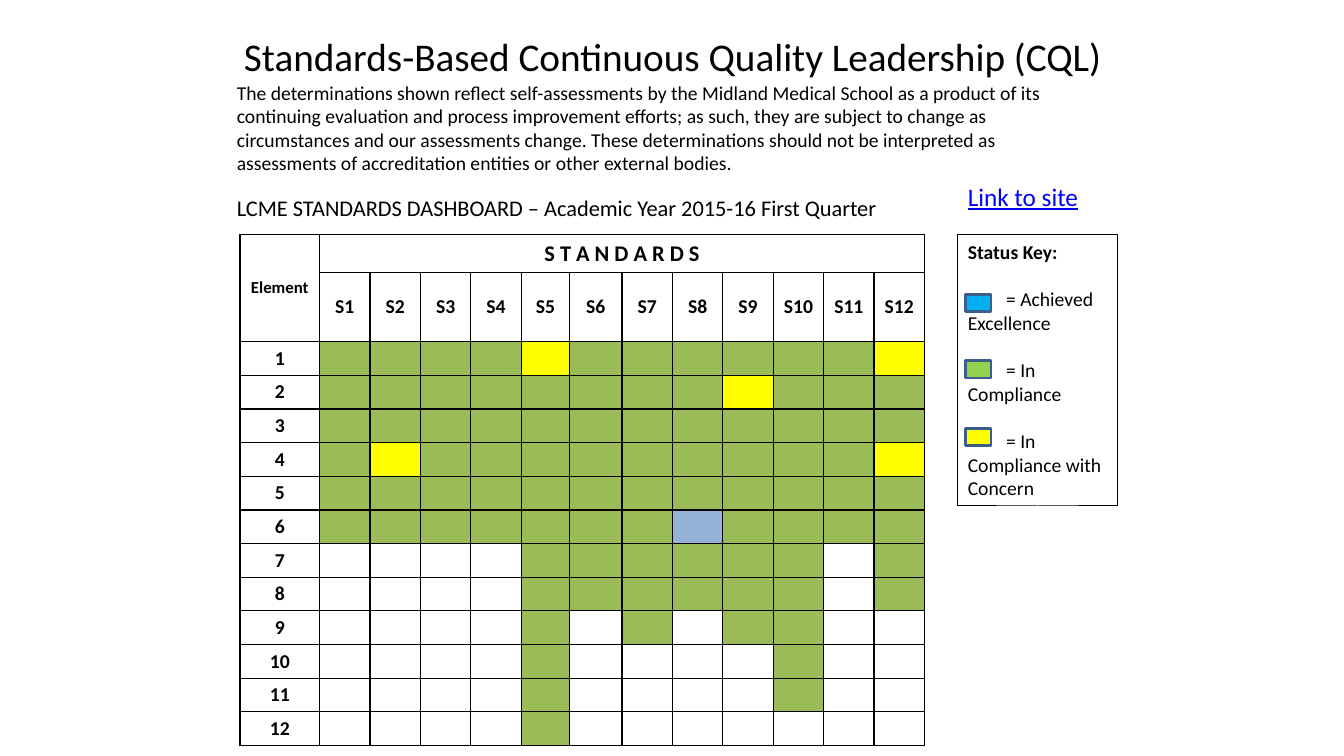
from lxml import etree
from pptx import Presentation
from pptx.dml.color import RGBColor
from pptx.enum.shapes import MSO_SHAPE
from pptx.enum.text import MSO_ANCHOR, PP_ALIGN
from pptx.oxml.ns import qn
from pptx.util import Inches, Pt

RECT = MSO_SHAPE.RECTANGLE
TOP, MIDDLE = MSO_ANCHOR.TOP, MSO_ANCHOR.MIDDLE
LEFT, CENTER = PP_ALIGN.LEFT, PP_ALIGN.CENTER

TITLE = "Standards-Based Continuous Quality Leadership (CQL)"
DISCLAIMER = (
    "The determinations shown reflect self-assessments by the Midland Medical School "
    "as a product of its continuing evaluation and process improvement efforts; as such, "
    "they are subject to change as circumstances and our assessments change. These "
    "determinations should not be interpreted as assessments of accreditation entities "
    "or other external bodies."
)
DASHBOARD = "LCME STANDARDS DASHBOARD – Academic Year 2015-16 First Quarter"
LINK = "Link to site"
KEY_TITLE = "Status Key:"
# (meaning, swatch colour, swatch top)
KEY = [
    ("= Achieved Excellence", "excellence_key", 2.92),
    ("= In Compliance", "compliance_key", 3.58),
    ("= In Compliance with Concern", "concern", 4.25),
]
# One row per element, one letter per standard S1 to S12:
# G in compliance, Y with concern, B excellence, - not applicable
STATUS = [
    "GGGGYGGGGGGY",
    "GGGGGGGGYGGG",
    "GGGGGGGGGGGG",
    "GYGGGGGGGGGY",
    "GGGGGGGGGGGG",
    "GGGGGGGBGGGG",
    "----GGGGGG-G",
    "----GGGGGG-G",
    "----G-G-GG--",
    "----G----G--",
    "----G----G--",
    "----G-------",
]
FILL = {"G": "compliance", "Y": "concern", "B": "excellence", "-": "paper"}
COLUMNS = [0.79] + [0.5] * 4 + [0.48, 0.52] + [0.5] * 6
ROWS = [0.37, 0.69] + [0.334] * len(STATUS)

THEME = {
    "font": "Calibri",
    "ink": "000000", "paper": "FFFFFF", "link": "0000FF", "swatch_line": "3A5F8C",
    "compliance": "9BBB59", "concern": "FFFF00", "excellence": "95B3D7",
    "compliance_key": "92D050", "excellence_key": "00B0F0",
    "title": 28, "link_size": 18, "heading": 16, "body": 14, "small": 12,
}


def color(name):
    return RGBColor.from_string(THEME[name])


def write(p, text, size="body", ink="ink", bold=False, align=LEFT):
    p.alignment = align
    r = p.add_run()
    r.text = text
    r.font.name = THEME["font"]
    r.font.size = Pt(THEME[size])
    r.font.bold = bold
    r.font.color.rgb = color(ink)
    return r


def add_text(s, box, text, size="body", ink="ink", wrap=True):
    tf = s.shapes.add_textbox(*map(Inches, box)).text_frame
    tf.word_wrap = wrap
    return write(tf.paragraphs[0], text, size, ink)


def add_rect(s, box, line, width, fill=None):
    sp = s.shapes.add_shape(RECT, *map(Inches, box))
    sp.shadow.inherit = False
    sp.line.color.rgb = color(line)
    sp.line.width = Pt(width)
    if fill:
        sp.fill.solid()
        sp.fill.fore_color.rgb = color(fill)
    else:
        sp.fill.background()
    return sp


def style_cell(cell, fill):
    """Give a cell black borders, a fill, tight margins and a body-size empty line."""
    tc_pr = cell._tc.get_or_add_tcPr()
    for side in ("lnL", "lnR", "lnT", "lnB"):
        ln = etree.SubElement(tc_pr, qn(f"a:{side}"), w=str(Pt(1)))
        solid = etree.SubElement(ln, qn("a:solidFill"))
        etree.SubElement(solid, qn("a:srgbClr"), val=THEME["ink"])
    cell.fill.solid()
    cell.fill.fore_color.rgb = color(fill)
    cell.margin_left = cell.margin_right = Inches(0.05)
    cell.margin_top = cell.margin_bottom = Inches(0.04)
    cell.vertical_anchor = MIDDLE
    p = cell.text_frame.paragraphs[0]
    etree.SubElement(p._p, qn("a:endParaRPr"), sz=str(THEME["body"] * 100))


def add_dashboard(s, left, top):
    frame = s.shapes.add_table(len(ROWS), len(COLUMNS), Inches(left), Inches(top),
                               Inches(sum(COLUMNS)), Inches(sum(ROWS)))
    table = frame.table
    for column, width in zip(table.columns, COLUMNS):
        column.width = Inches(width)
    for row, height in zip(table.rows, ROWS):
        row.height = Inches(height)

    def label(row, col, text, size="body"):
        p = table.cell(row, col).text_frame.paragraphs[0]
        write(p, text, size, bold=True, align=CENTER)

    fills = ["-" * len(COLUMNS)] * 2 + ["-" + line for line in STATUS]
    for i, line in enumerate(fills):
        for j, status in enumerate(line):
            style_cell(table.cell(i, j), FILL[status])
    table.cell(0, 0).merge(table.cell(1, 0))
    table.cell(0, 1).merge(table.cell(0, len(COLUMNS) - 1))
    label(0, 0, "Element", "small")
    label(0, 1, "S T A N D A R D S", "heading")
    for j in range(1, len(COLUMNS)):
        label(1, j, f"S{j}")
    for i in range(1, len(STATUS) + 1):
        label(i + 1, 0, str(i))


def add_status_key(s):
    tf = add_rect(s, (9.5, 2.33, 1.58, 2.69), "ink", 0.75).text_frame
    tf.word_wrap = True
    tf.vertical_anchor = TOP
    write(tf.paragraphs[0], KEY_TITLE, bold=True)
    for meaning, fill, top in KEY:
        p = tf.add_paragraph()
        p.space_before = Pt(17)
        p._p.get_or_add_pPr().set("indent", str(Inches(0.38)))
        write(p, meaning)
        add_rect(s, (9.58, top, 0.25, 0.17), "swatch_line", 2, fill)


def main():
    prs = Presentation()
    prs.slide_width, prs.slide_height = Inches(13.33), Inches(7.5)
    s = prs.slides.add_slide(prs.slide_layouts[5])

    title = s.shapes.title
    title.left, title.top, title.width, title.height = map(Inches, (1.67, 0.25, 10, 0.61))
    title.text_frame.vertical_anchor = MIDDLE
    write(title.text_frame.paragraphs[0], TITLE, "title", align=CENTER)

    add_text(s, (2.25, 0.75, 8.75, 1.04), DISCLAIMER)
    add_text(s, (2.25, 1.88, 6.92, 0.37), DASHBOARD, "heading")
    link = add_text(s, (9.5, 1.75, 1.31, 0.4), LINK, "link_size", "link", wrap=False)
    link.font.underline = True
    add_dashboard(s, 2.38, 2.33)
    add_status_key(s)
    prs.save("out.pptx")


if __name__ == "__main__":
    main()
